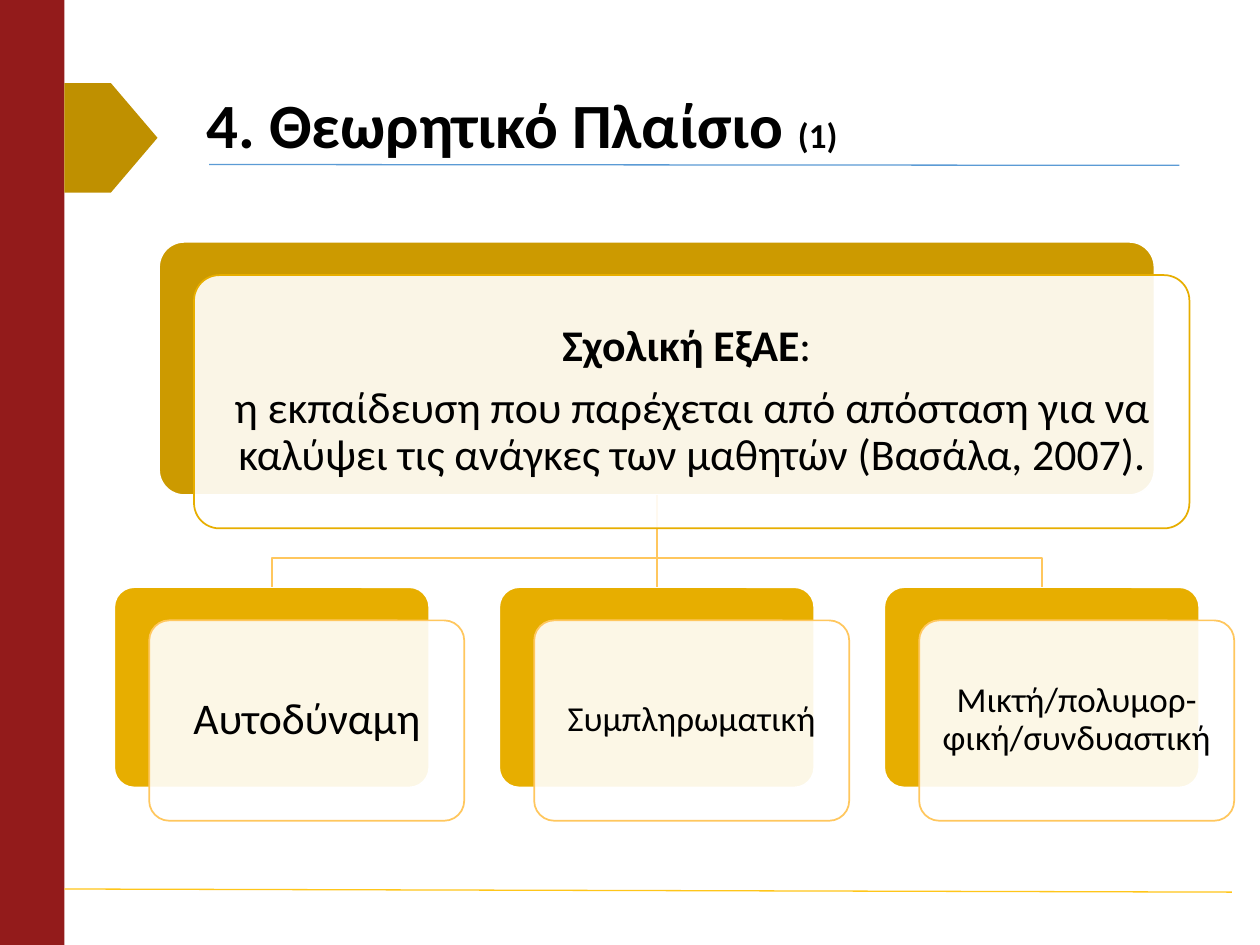
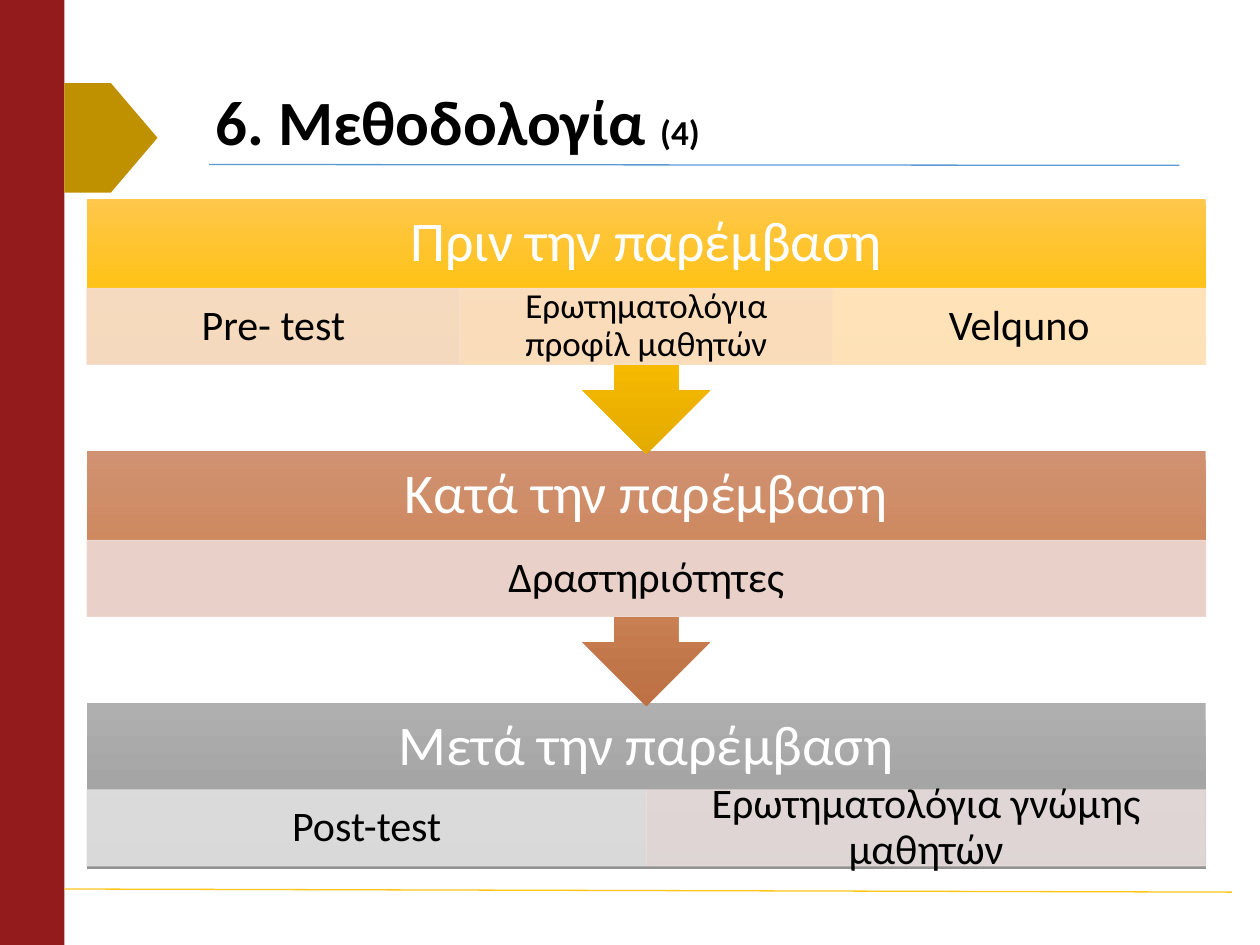
from copy import deepcopy
from lxml.etree import SubElement
from pptx import Presentation
from pptx.dml.color import RGBColor
from pptx.enum.shapes import MSO_CONNECTOR, MSO_SHAPE
from pptx.enum.text import MSO_ANCHOR, PP_ALIGN
from pptx.oxml.ns import qn
from pptx.util import Pt

FONT = "Calibri"
COLORS = {
    "text": "000000", "white": "FFFFFF", "band": "931B1B", "tab": "BF9000",
    "title_rule": "5B9BD5", "footer_rule": "FFC61A",
    "root": "CC9A00", "child": "E7AE00", "branch": "FFC75E",
}
STAGES = [
    {"title": "Πριν την παρέμβαση", "gradient": ("FFC74B", "FFC000", "E3AB00"), "cell_top": 51,
     "cells": [("Pre- test", 24, "F4DDD3"),
               ("Ερωτηματολόγια προφίλ μαθητών", 20, "FAE0CF"),
               ("Velquno", 24, "FFE6CB")]},
    {"title": "Κατά την παρέμβαση", "gradient": ("D09272", "CD8557", "BC7044"), "cell_top": 51,
     "cells": [("Δραστηριότητες", 24, "EDDAD6")]},
    {"title": "Μετά την παρέμβαση", "gradient": ("AFAFAF", "A5A5A5", "939393"), "cell_top": 49.5,
     "cells": [("Post-test", 24, "E1E1E1"),
               ("Ερωτηματολόγια γνώμης μαθητών", 24, "E7DCDC")]},
]


def rgb(color):
    return RGBColor.from_string(COLORS.get(color, color))


def set_alpha(fill_parent, percent):
    clr = fill_parent.find(qn("a:solidFill"))[0]
    SubElement(clr, qn("a:alpha")).set("val", str(percent * 1000))


def add_box(s, kind, box, fill, line=None, width=1, adj=None, alpha=None):
    sp = s.shapes.add_shape(kind, *map(Pt, box))
    sp.shadow.inherit = False
    if adj is not None:
        sp.adjustments[0] = adj
    if isinstance(fill, tuple):
        fill_gradient(sp, fill)
    else:
        sp.fill.solid()
        sp.fill.fore_color.rgb = rgb(fill)
        if alpha:
            set_alpha(sp._element.spPr, alpha)
    if line:
        sp.line.color.rgb = rgb(line)
        sp.line.width = Pt(width)
    else:
        sp.line.fill.background()
    return sp


def fill_gradient(sp, colors):
    sp.fill.gradient()
    sp.fill.gradient_angle = 270
    gs_lst = sp._element.spPr.find(qn("a:gradFill")).find(qn("a:gsLst"))
    gs_lst.insert(1, deepcopy(gs_lst[0]))
    for i, (stop, color) in enumerate(zip(sp.fill.gradient_stops, colors)):
        stop.color.rgb = rgb(color)
        stop.position = i / 2


def write_text(sp, paragraphs, margins, align=PP_ALIGN.CENTER, color="text"):
    tf = sp.text_frame
    tf.word_wrap = True
    tf.vertical_anchor = MSO_ANCHOR.MIDDLE
    tf.margin_left = tf.margin_right = Pt(margins[0])
    tf.margin_top = tf.margin_bottom = Pt(margins[1])
    for i, runs in enumerate(paragraphs):
        p = tf.add_paragraph() if i else tf.paragraphs[0]
        p.alignment = align
        p.line_spacing = 0.9
        if len(paragraphs) > 1:
            p.space_after = Pt(runs[0][1] * 0.35)
        for text, size, bold in runs:
            r = p.add_run()
            r.text = text
            r.font.name = FONT
            r.font.size = Pt(size)
            r.font.bold = bold
            r.font.color.rgb = rgb(color)


def add_line(s, start, end, color, width):
    cx = s.shapes.add_connector(MSO_CONNECTOR.STRAIGHT, *map(Pt, start + end))
    cx.line.color.rgb = rgb(color)
    cx.line.width = Pt(width)
    SubElement(cx._element.spPr, qn("a:effectLst"))
    return cx


def add_branch(s, points):
    builder = s.shapes.build_freeform(*map(Pt, points[0]))
    builder.add_line_segments([(Pt(x), Pt(y)) for x, y in points[1:]], close=False)
    sp = builder.convert_to_shape()
    sp.shadow.inherit = False
    sp.fill.background()
    sp.line.color.rgb = rgb("branch")
    sp.line.width = Pt(1)


def add_base_slide(prs, title, number, title_box):
    s = prs.slides.add_slide(prs.slide_layouts[6])
    add_box(s, MSO_SHAPE.RECTANGLE, (0, 0, 36.8, 540), "band")
    add_line(s, (119.5, 94), (674, 94.5), "title_rule", 0.75)
    add_line(s, (36.8, 508), (704, 509.8), "footer_rule", 0.75)
    add_box(s, MSO_SHAPE.PENTAGON, (36.8, 47.5, 53.2, 62.5), "tab", adj=0.5)
    tb = s.shapes.add_textbox(*map(Pt, title_box))
    write_text(tb, [[(title + " ", 36, True), (number, 20, True)]], (7.2, 3.6), PP_ALIGN.LEFT)
    return s


def add_card_back(s, box, color):
    return add_box(s, MSO_SHAPE.ROUNDED_RECTANGLE, box, color, "white", adj=0.1)


def add_card_front(s, box, line, paragraphs, margin):
    left, top, width, height = box
    sp = add_box(s, MSO_SHAPE.ROUNDED_RECTANGLE, (left + 20, top + 19, width, height),
                 "white", line, adj=0.1, alpha=90)
    write_text(sp, paragraphs, (margin, margin))


def add_hierarchy(s, root_paragraphs, children):
    root_box = (90.9, 138.2, 568.8, 144.7)
    child_boxes = [(65.3 + 220 * i, 335.5, 180, 114.5) for i in range(len(children))]
    root = add_card_back(s, root_box, "root")
    backs = [add_card_back(s, box, "child") for box in child_boxes]
    root_x, root_bottom, bend_y = 375.3, 282.9, 319
    for box, back in zip(child_boxes, backs):
        x, top = box[0] + 90, box[1]
        if abs(x - root_x) < 1:
            cx = add_line(s, (root_x, root_bottom), (x, top), "branch", 1)
            cx.begin_connect(root, 2)
            cx.end_connect(back, 0)
        else:
            add_branch(s, [(root_x, root_bottom), (root_x, bend_y), (x, bend_y), (x, top)])
    add_card_front(s, root_box, "child", root_paragraphs, 7.2)
    for box, (text, size) in zip(child_boxes, children):
        add_card_front(s, box, "branch", [[(text, size, False)]], 5.8)


def add_stage(s, stage, top, has_arrow):
    left, width = 49.7, 639.3
    kind, height = (MSO_SHAPE.DOWN_ARROW_CALLOUT, 145.5) if has_arrow else (MSO_SHAPE.RECTANGLE, 95)
    add_box(s, kind, (left, top, width, height), stage["gradient"])
    header = s.shapes.add_textbox(Pt(left), Pt(top), Pt(width), Pt(51))
    write_text(header, [[(stage["title"], 32, False)]], (18, 0), color="white")
    cell_w = width / len(stage["cells"])
    for i, (text, size, color) in enumerate(stage["cells"]):
        box = (left + i * cell_w, top + stage["cell_top"], cell_w, 43.5)
        cell = add_box(s, MSO_SHAPE.RECTANGLE, box, color, color, 0.5, alpha=90)
        set_alpha(cell._element.spPr.find(qn("a:ln")), 90)
        write_text(cell, [[(text, size, False)]], (size * 0.57, 2.2))


def main():
    prs = Presentation()
    prs.slide_width, prs.slide_height = Pt(720), Pt(540)

    s = add_base_slide(prs, "4. Θεωρητικό Πλαίσιο", "(1)", (110.9, 43.2, 566.6, 60.5))
    definition = ("η εκπαίδευση που παρέχεται από απόσταση για να καλύψει "
                  "τις ανάγκες των μαθητών (Βασάλα, 2007).")
    add_hierarchy(
        s,
        [[("Σχολική ΕξΑΕ", 25, True), (": ", 25, False)], [(definition, 25, False)]],
        [("Αυτοδύναμη", 25), ("Συμπληρωματική", 20), ("Μικτή/πολυμορ-φική/συνδυαστική", 20)],
    )

    s = add_base_slide(prs, "6. Μεθοδολογία", "(4)", (116, 26, 554.4, 90.7))
    last = len(STAGES) - 1
    for i in range(last, -1, -1):
        add_stage(s, STAGES[i], 113.8 + 144 * i, i < last)

    prs.save("out.pptx")


if __name__ == "__main__":
    main()
